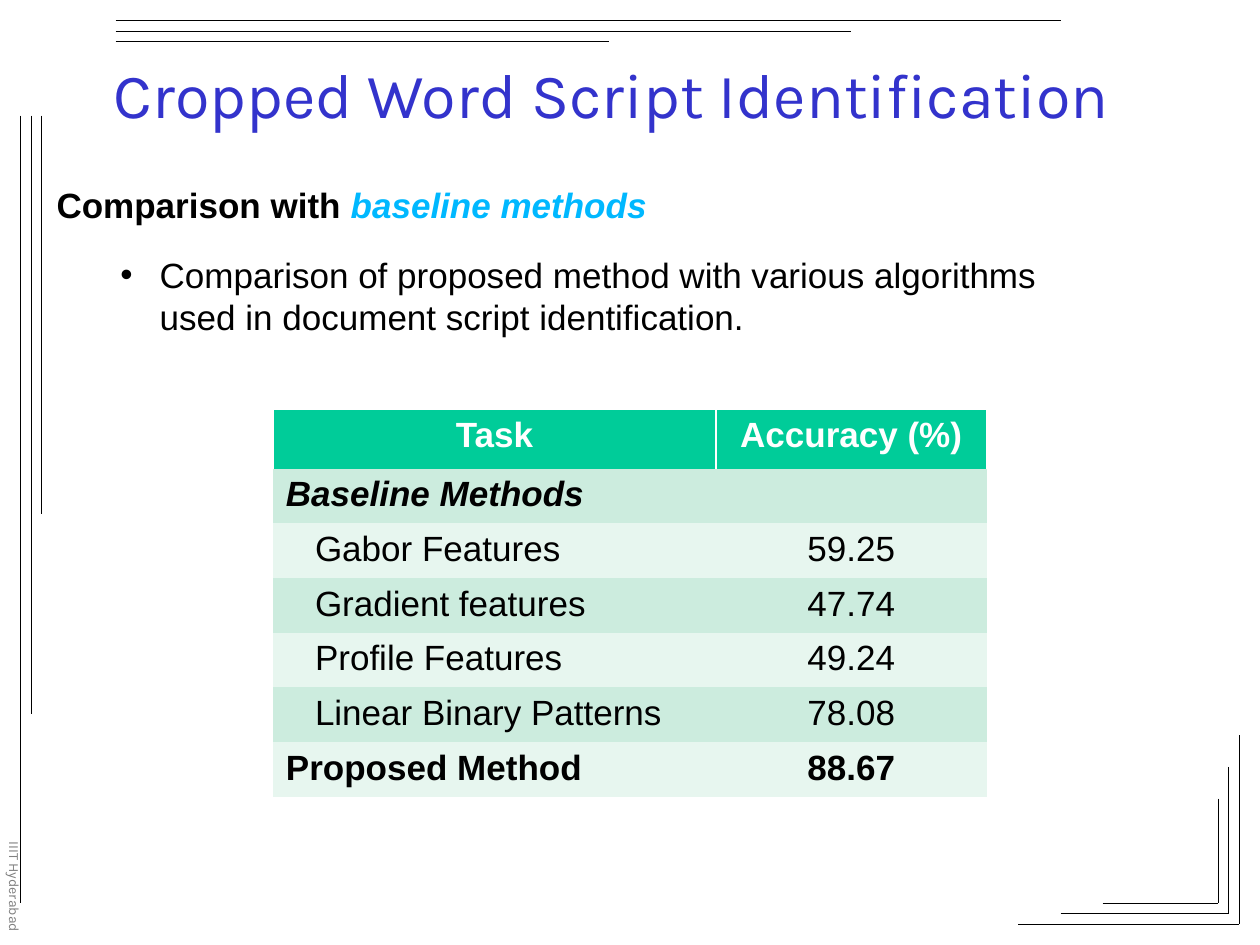
from lxml import etree
from pptx import Presentation
from pptx import util as u
from pptx.dml.color import RGBColor
from pptx.enum import shapes, text
from pptx.oxml import ns

BLACK = RGBColor(0x00, 0x00, 0x00)
WHITE = RGBColor(0xFF, 0xFF, 0xFF)
GRAY = RGBColor(0x80, 0x80, 0x80)
TITLE_BLUE = RGBColor(0x33, 0x33, 0xCC)
SKY = RGBColor(0x00, 0xB8, 0xFF)
GREEN = RGBColor(0x00, 0xCC, 0x99)
BANDS = (RGBColor(0xCC, 0xEC, 0xDE), RGBColor(0xE7, 0xF6, 0xEF))

PLAIN_TABLE_STYLE = "{2D5ABB26-0587-4C30-8999-92F81FD0307C}"
LEFT, CENTER = text.PP_ALIGN.LEFT, text.PP_ALIGN.CENTER


class SlideBuilder:
    heading_font = "Karla"
    body_font = "Arial"
    body_size = 20

    def __init__(self, slide):
        self.slide = slide

    def style(self, font, color=BLACK, size=body_size, name=body_font,
              bold=False, italic=False):
        font.name, font.size = name, u.Pt(size)
        font.bold, font.italic = bold, italic
        font.color.rgb = color

    def line(self, x1, y1, x2, y2):
        connector = self.slide.shapes.add_connector(
            shapes.MSO_CONNECTOR.STRAIGHT, u.Cm(x1), u.Cm(y1), u.Cm(x2), u.Cm(y2))
        connector.line.color.rgb = BLACK
        connector.line.width = u.Pt(0.75)
        properties = connector._element.spPr
        etree.SubElement(properties, ns.qn("a:effectLst"))

    def title(self, content, left, top, width, height):
        shape = self.slide.shapes.title
        shape.left, shape.top = u.Cm(left), u.Cm(top)
        shape.width, shape.height = u.Cm(width), u.Cm(height)
        frame = shape.text_frame
        frame.text = content
        frame.auto_size = text.MSO_AUTO_SIZE.NONE
        frame.vertical_anchor = text.MSO_ANCHOR.MIDDLE
        paragraph = frame.paragraphs[0]
        paragraph.alignment = CENTER
        self.style(paragraph.font, TITLE_BLUE, 36, self.heading_font)

    def text_box(self, left, top, width, height):
        box = self.slide.shapes.add_textbox(
            u.Cm(left), u.Cm(top), u.Cm(width), u.Cm(height))
        box.text_frame.word_wrap = True
        return box.text_frame

    def side_label(self, content, left, top, width, height):
        frame = self.text_box(left, top, width, height)
        frame._txBody.bodyPr.set("vert", "eaVert")
        frame.text = content
        self.style(frame.paragraphs[0].font, GRAY, 8, self.heading_font)

    def heading(self, plain, accent, left, top, width, height, indent):
        paragraph = self.text_box(left, top, width, height).paragraphs[0]
        paragraph._p.get_or_add_pPr().set("marL", str(u.Cm(indent)))
        for content, color, italic in ((plain, BLACK, False), (accent, SKY, True)):
            run = paragraph.add_run()
            run.text = content
            self.style(run.font, color, bold=True, italic=italic)

    def bullet(self, content, left, top, width, height, indent):
        frame = self.text_box(left, top, width, height)
        frame.text = content
        paragraph = frame.paragraphs[0]
        properties = paragraph._p.get_or_add_pPr()
        properties.set("marL", str(u.Cm(indent)))
        properties.set("indent", str(-u.Cm(indent)))
        etree.SubElement(properties, ns.qn("a:buFont"), typeface="Arial")
        etree.SubElement(properties, ns.qn("a:buChar"), char="•")
        self.style(paragraph.font)

    def white_borders(self, cell):
        properties = cell._tc.get_or_add_tcPr()
        for side in ("lnL", "lnR", "lnT"):
            border = etree.SubElement(properties, ns.qn("a:" + side), w=str(u.Pt(1)))
            fill = etree.SubElement(border, ns.qn("a:solidFill"))
            etree.SubElement(fill, ns.qn("a:srgbClr"), val=str(WHITE))

    def cell(self, cell, content, fill, color=BLACK, alignment=LEFT,
             bold=False, italic=False):
        cell.fill.solid()
        cell.fill.fore_color.rgb = fill
        cell.text = content
        paragraph = cell.text_frame.paragraphs[0]
        paragraph.alignment = alignment
        self.style(paragraph.font, color, bold=bold, italic=italic)

    def table(self, header, rows, left, top, widths, header_height, row_height):
        frame = self.slide.shapes.add_table(
            len(rows) + 1, len(header), u.Cm(left), u.Cm(top), u.Cm(sum(widths)),
            u.Cm(header_height + row_height * len(rows)))
        table = frame.table
        table.horz_banding = False
        table._tbl.tblPr.find(ns.qn("a:tableStyleId")).text = PLAIN_TABLE_STYLE
        for column, width in zip(table.columns, widths):
            column.width = u.Cm(width)
        for index, row in enumerate(table.rows):
            row.height = u.Cm(row_height if index else header_height)
        for column, content in enumerate(header):
            cell = table.cell(0, column)
            self.white_borders(cell)
            self.cell(cell, content, GREEN, WHITE, CENTER, bold=True)
        for index, (task, accuracy, kind) in enumerate(rows):
            fill = BANDS[index % 2]
            bold = kind != "method"
            task_cell, accuracy_cell = table.rows[index + 1].cells
            self.cell(task_cell, task, fill, bold=bold, italic=kind == "group")
            if kind == "method":
                task_cell.margin_left = u.Cm(0.84)
            self.cell(accuracy_cell, accuracy, fill, alignment=CENTER, bold=bold)


def main():
    presentation = Presentation()
    presentation.slide_width, presentation.slide_height = u.Cm(25.4), u.Cm(19.05)
    slide = presentation.slides.add_slide(presentation.slide_layouts[5])
    builder = SlideBuilder(slide)

    # Decorative lines: top, left and bottom right corner
    start, first, gap = 2.33, 0.42, 0.21
    for index, (right, bottom) in enumerate(
            ((21.38, 18.2), (17.15, 14.4), (12.28, 10.37))):
        offset = first + gap * index
        builder.line(start, offset, right, offset)
        builder.line(offset, start, offset, bottom)
        corner_x, corner_y = 24.98 - gap * index, 18.63 - gap * index
        builder.line(20.53 + 0.85 * index, corner_y, corner_x, corner_y)
        builder.line(corner_x, 14.82 + 0.64 * index, corner_x, corner_y)
    builder.side_label("IIIT Hyderabad", -0.25, 16.71, 0.84, 2.34)

    # Title and text
    builder.title("Cropped Word Script Identification", 1.55, 0.74, 21.56, 2.29)
    builder.heading("Comparison with ", "baseline methods",
                    -1.17, 3.58, 23.7, 1.11, indent=2.06)
    builder.bullet("Comparison of proposed method with various algorithms "
                   "used in document script identification.",
                   2.18, 4.98, 19.89, 1.96, indent=0.79)

    # Results table
    builder.table(
        ("Task", "Accuracy (%)"),
        (("Baseline Methods", "", "group"),
         ("Gabor Features", "59.25", "method"),
         ("Gradient features", "47.74", "method"),
         ("Profile Features", "49.24", "method"),
         ("Linear Binary Patterns", "78.08", "method"),
         ("Proposed Method", "88.67", "proposed")),
        5.51, 8.26, widths=(8.92, 5.46), header_height=1.19, row_height=1.1)

    presentation.save("out.pptx")


if __name__ == "__main__":
    main()
